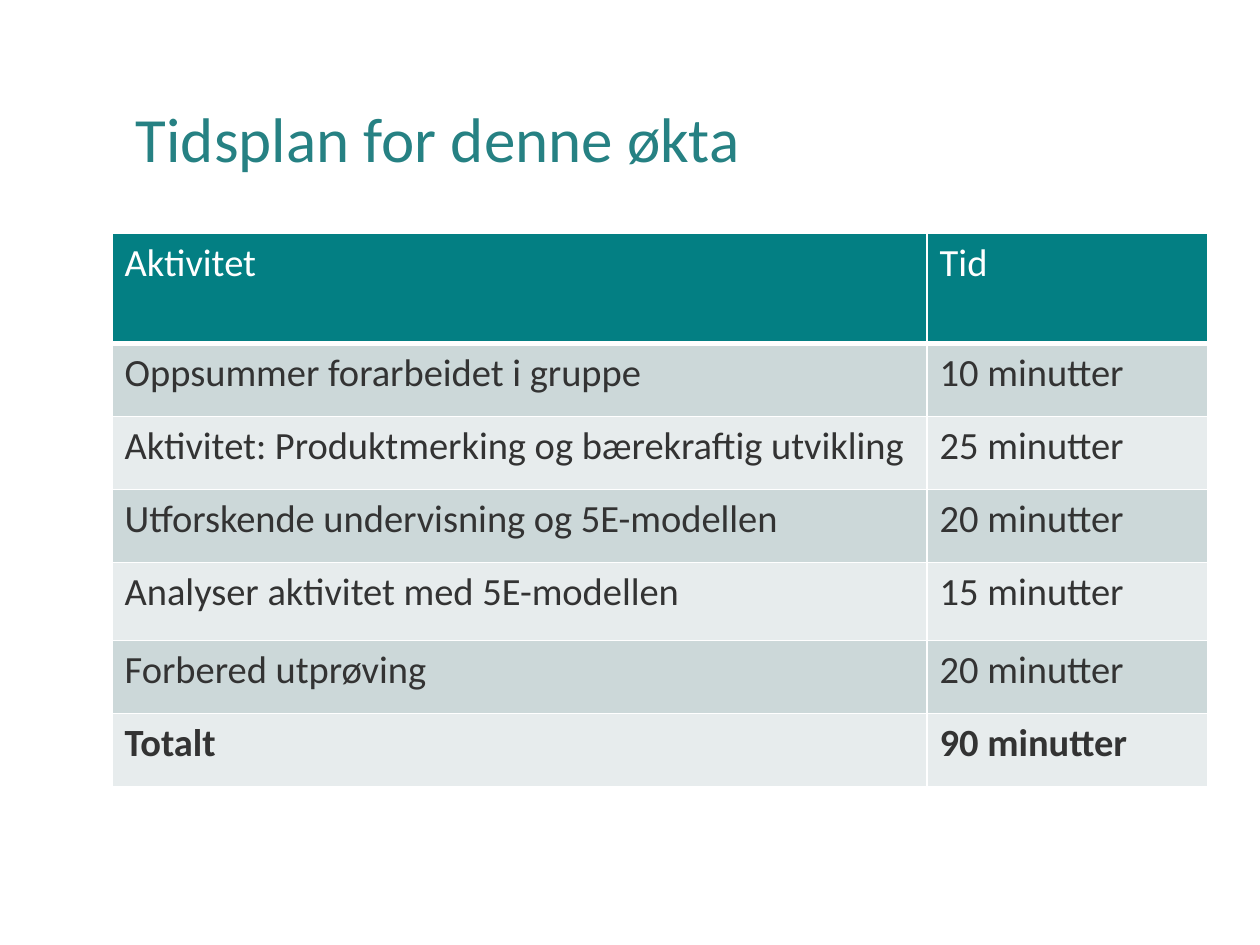
from lxml import etree
from pptx import Presentation
from pptx.dml.color import RGBColor
from pptx.enum.text import MSO_ANCHOR
from pptx.oxml.ns import qn
from pptx.util import Cm, Pt

MIDDLE = MSO_ANCHOR.MIDDLE

TITLE = "Tidsplan for denne økta"
SCHEDULE = [
    ("Aktivitet", "Tid"),
    ("Oppsummer forarbeidet i gruppe", "10 minutter"),
    ("Aktivitet: Produktmerking og bærekraftig utvikling", "25 minutter"),
    ("Utforskende undervisning og 5E-modellen", "20 minutter"),
    ("Analyser aktivitet med 5E-modellen", "15 minutter"),
    ("Forbered utprøving", "20 minutter"),
    ("Totalt", "90 minutter"),
]
COLUMN_WIDTHS = [Cm(16.43), Cm(5.66)]
ROW_HEIGHTS = [Cm(height) for height in (2.23, 1.47, 1.47, 1.47, 1.57, 1.47, 1.47)]

FONT = "Calibri"
WHITE = RGBColor(0xFF, 0xFF, 0xFF)
TITLE_TEAL = RGBColor(0x26, 0x81, 0x83)
HEADER_TEAL = RGBColor(0x03, 0x7F, 0x83)
BODY_TEXT = RGBColor(0x33, 0x33, 0x33)
BANDS = [RGBColor(0xCC, 0xD8, 0xD9), RGBColor(0xE7, 0xEC, 0xED)]
THIN, THICK = Pt(1), Pt(3)


def style_font(font, size, color, bold=False):
    font.name = FONT
    font.size = Pt(size)
    font.bold = bold
    font.color.rgb = color


def add_borders(cell, top, bottom):
    """Draw white lines on all four sides; must run before the cell is filled."""
    properties = cell._tc.get_or_add_tcPr()
    for side, width in (("L", THIN), ("R", THIN), ("T", top), ("B", bottom)):
        line = etree.SubElement(properties, qn(f"a:ln{side}"), w=str(width))
        fill = etree.SubElement(line, qn("a:solidFill"))
        etree.SubElement(fill, qn("a:srgbClr"), val=str(WHITE))


def add_title(page):
    box = page.shapes.add_textbox(Cm(2.49), Cm(1.02), Cm(21.06), Cm(3.68))
    frame = box.text_frame
    frame.word_wrap = True
    frame.vertical_anchor = MIDDLE
    frame.text = TITLE
    para = frame.paragraphs[0]
    para.line_spacing = 0.9
    style_font(para.runs[0].font, 36, TITLE_TEAL)


def add_schedule(page):
    table = page.shapes.add_table(
        len(SCHEDULE), len(COLUMN_WIDTHS), Cm(2.26), Cm(4.7),
        sum(COLUMN_WIDTHS), sum(ROW_HEIGHTS)).table
    for column, width in zip(table.columns, COLUMN_WIDTHS):
        column.width = width
    last = len(SCHEDULE) - 1
    for index, (row, height) in enumerate(zip(table.rows, ROW_HEIGHTS)):
        row.height = height
        is_header = index == 0
        for cell, text in zip(row.cells, SCHEDULE[index]):
            add_borders(cell, THICK if index == 1 else THIN,
                        THICK if is_header else THIN)
            cell.fill.solid()
            cell.fill.fore_color.rgb = HEADER_TEAL if is_header else BANDS[(index - 1) % 2]
            cell.text_frame.text = text
            style_font(cell.text_frame.paragraphs[0].runs[0].font, 22,
                       WHITE if is_header else BODY_TEXT, bold=index == last)


def main():
    deck = Presentation()
    deck.slide_width, deck.slide_height = Cm(25.4), Cm(19.05)
    page = deck.slides.add_slide(deck.slide_layouts[6])
    add_title(page)
    add_schedule(page)
    deck.save("out.pptx")


if __name__ == "__main__":
    main()
